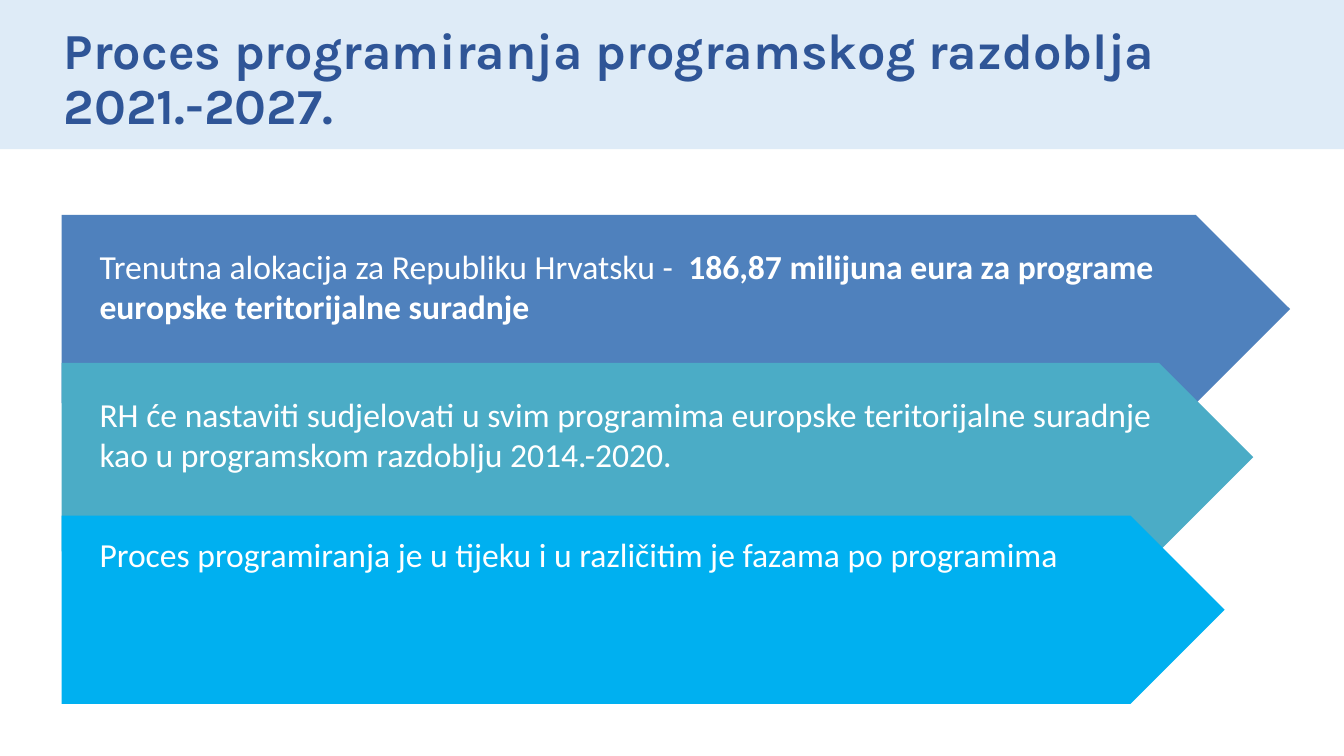
"""Build the slide on the 2021-2027 programming process."""
from pptx import Presentation
from pptx.dml.color import RGBColor
from pptx.enum.shapes import MSO_SHAPE
from pptx.enum.text import MSO_ANCHOR, MSO_AUTO_SIZE, PP_ALIGN
from pptx.util import Pt

RECTANGLE, PENTAGON = MSO_SHAPE.RECTANGLE, MSO_SHAPE.PENTAGON
TOP, MIDDLE = MSO_ANCHOR.TOP, MSO_ANCHOR.MIDDLE
LEFT = PP_ALIGN.LEFT
NO_FIT, GROW = MSO_AUTO_SIZE.NONE, MSO_AUTO_SIZE.SHAPE_TO_FIT_TEXT

SLIDE_W, SLIDE_H = 960, 540
HEADING = "Proces programiranja programskog razdoblja 2021.-2027."
BAND_H, BAND_COLOR, HEADING_COLOR = 106.5, "DEEBF7", "2F5597"
ARROW_LEFT, ARROW_H = 44, 134.5
MESSAGE_LEFT = 64

# Each message is a list of (text, bold) runs.
MESSAGES = [
    {"runs": [("Trenutna alokacija za Republiku Hrvatsku -  ", False),
              ("186,87 milijuna eura za programe europske teritorijalne suradnje", True)],
     "color": "4F81BD", "arrow_top": 153.5, "arrow_w": 877.5,
     "text_top": 172, "text_w": 769, "text_h": 65.5},
    {"runs": [("RH će nastaviti sudjelovati u svim programima europske teritorijalne "
               "suradnje kao u programskom razdoblju 2014.-2020.", False)],
     "color": "4BACC6", "arrow_top": 259.25, "arrow_w": 851.25,
     "text_top": 277.5, "text_w": 782, "text_h": 65.5},
    {"runs": [("Proces programiranja je u tijeku i u različitim je fazama po programima", False)],
     "color": "00B0F0", "arrow_top": 368.25, "arrow_w": 830.75,
     "text_top": 378, "text_w": 760, "text_h": 36},
]


def rgb(color):
    """Turn a hex string into a colour."""
    return RGBColor.from_string(color)


def write(frame, runs, *, size, font, color, anchor=TOP, fit=GROW, spacing=None):
    """Fill a text frame with (text, bold) runs in one format."""
    frame.word_wrap = True
    frame.auto_size = fit
    frame.vertical_anchor = anchor
    paragraph = frame.paragraphs[0]
    paragraph.alignment = LEFT
    paragraph.line_spacing = spacing
    for text, bold in runs:
        run = paragraph.add_run()
        run.text = text
        run.font.name, run.font.size, run.font.bold = font, Pt(size), bold
        run.font.color.rgb = rgb(color)


def add_block(slide, kind, left, top, width, height, color):
    """Add a flat filled shape without outline."""
    block = slide.shapes.add_shape(kind, Pt(left), Pt(top), Pt(width), Pt(height))
    block.shadow.inherit = False
    block.fill.solid()
    block.fill.fore_color.rgb = rgb(color)
    block.line.fill.background()
    return block


def main():
    """Create and save the presentation."""
    deck = Presentation()
    deck.slide_width, deck.slide_height = Pt(SLIDE_W), Pt(SLIDE_H)
    slide = deck.slides.add_slide(deck.slide_layouts[5])

    heading = slide.shapes.title
    band = add_block(slide, RECTANGLE, 0, 0, SLIDE_W, BAND_H, BAND_COLOR)
    heading._element.addprevious(band._element)
    heading.left, heading.top = Pt(38.5), Pt(19.5)
    heading.width, heading.height = Pt(883.5), Pt(76)
    write(heading.text_frame, [(HEADING, True)], size=36, font="Karla",
          color=HEADING_COLOR, anchor=MIDDLE, fit=NO_FIT, spacing=0.9)

    for message in MESSAGES:
        arrow = add_block(slide, PENTAGON, ARROW_LEFT, message["arrow_top"],
                          message["arrow_w"], ARROW_H, message["color"])
        arrow.adjustments[0] = 0.5
    for message in MESSAGES:
        box = slide.shapes.add_textbox(Pt(MESSAGE_LEFT), Pt(message["text_top"]),
                                       Pt(message["text_w"]), Pt(message["text_h"]))
        write(box.text_frame, message["runs"], size=24, font="Calibri", color="FFFFFF")

    deck.save("out.pptx")


if __name__ == "__main__":
    main()
